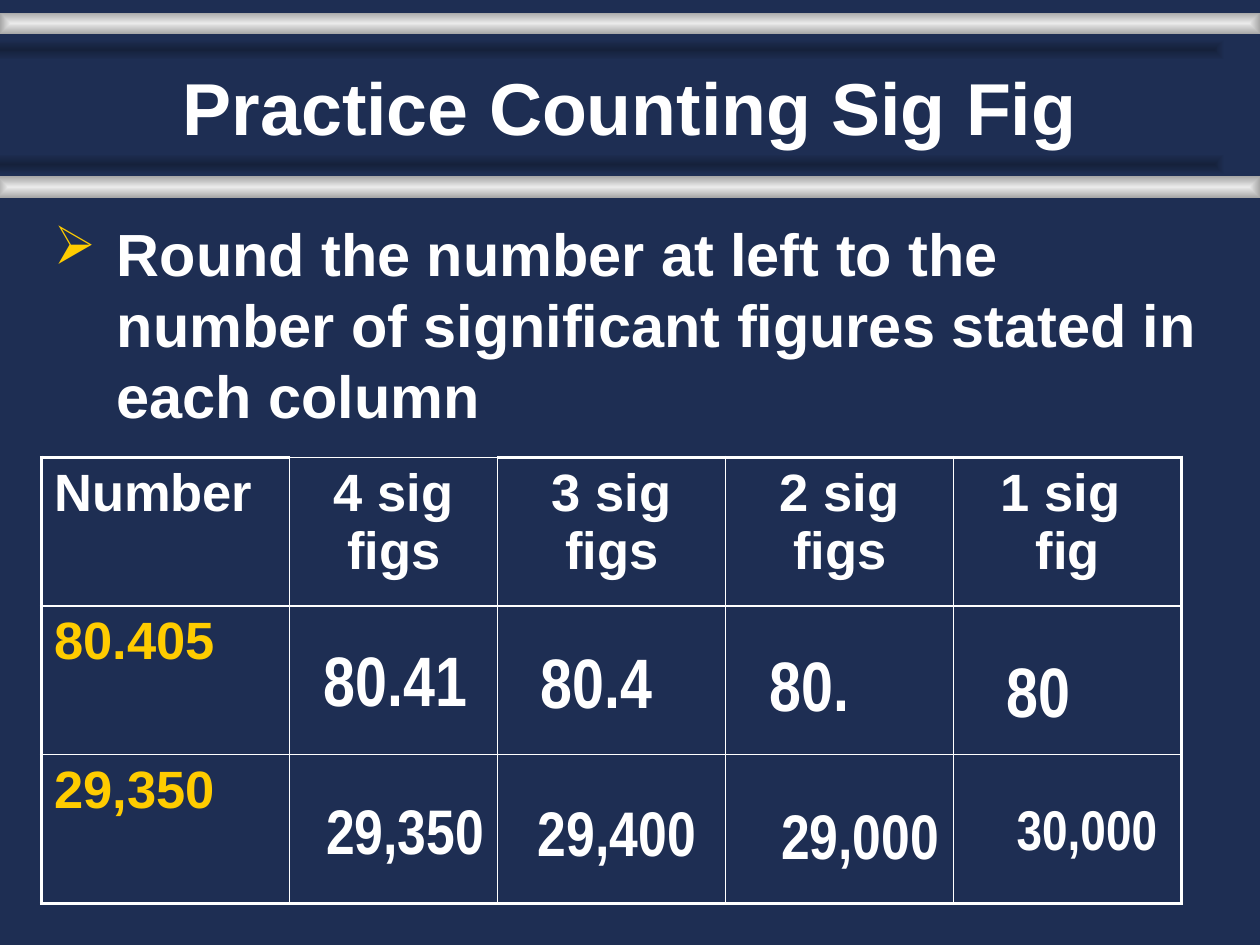
from lxml.etree import SubElement
from pptx import Presentation
from pptx.dml.color import RGBColor
from pptx.enum.shapes import MSO_SHAPE
from pptx.enum.text import MSO_ANCHOR, MSO_AUTO_SIZE, PP_ALIGN
from pptx.oxml import parse_xml
from pptx.oxml.ns import nsdecls, qn
from pptx.util import Inches, Pt

# Content
TITLE = "Practice Counting Sig Fig"
INSTRUCTION = ("Round the number at left to the number of significant figures "
               "stated in each column")
ROWS = [
    ["Number", "4 sig figs", "3 sig figs", "2 sig figs", "1 sig  fig"],
    ["80.405", "", "", "", ""],
    ["29,350", "", "", "", ""],
]
# Answers laid over the table: text, left, top, width, size
ANSWERS = [
    ("80.41", 2.47, 5.00, 1.43, 40), ("80.4", 4.19, 5.02, 1.52, 40),
    ("80.", 6.01, 5.04, 1.75, 40), ("80", 7.89, 5.09, 1.17, 40),
    ("29,350", 2.49, 6.23, 1.50, 36), ("29,400", 4.17, 6.25, 1.46, 36),
    ("29,000", 6.10, 6.27, 1.52, 36), ("30,000", 7.97, 6.26, 1.41, 32),
]

# Look
COLORS = {"navy": "1E2E53", "shade": "15213B", "light": "EAEAEA",
          "grey": "A7A7A7", "white": "FFFFFF", "gold": "FFCC00"}
METAL, SHADOW = ("light", "grey"), ("shade", "navy")
BARS = [(0, 0.1, 10, METAL), (-0.28, 0.31, 10, SHADOW),
        (-0.02, 1.4, 10.02, METAL), (-0.3, 1.22, 10.02, SHADOW)]
BAR_HEIGHT = 0.17
TABLE_LEFT, TABLE_TOP, ROW_HEIGHT = 0.33, 3.63, 1.18
COLUMNS = [1.97, 1.65] + [1.81] * 3
OUTER, INNER = 2.25, 1


def rgb(name):
    return RGBColor.from_string(COLORS[name])


def write(frame, text, size, color="white", font="Arial", before=0,
          align=PP_ALIGN.LEFT):
    """Fill a frame with one bold run; before is a share of the line."""
    paragraph = frame.paragraphs[0]
    paragraph.alignment = align
    if before:
        spacing = SubElement(paragraph._p.get_or_add_pPr(), qn("a:spcBef"))
        SubElement(spacing, qn("a:spcPct")).set("val", str(before * 1000))
    run = paragraph.add_run()
    run.text = text
    run.font.name, run.font.size, run.font.bold = font, Pt(size), True
    run.font.color.rgb = rgb(color)
    return paragraph


def add_frame(slide, left, top, width, height):
    box = slide.shapes.add_textbox(*map(Inches, (left, top, width, height)))
    box.text_frame.word_wrap = True
    return box.text_frame


def add_bar(slide, left, top, width, tones):
    bar = slide.shapes.add_shape(
        MSO_SHAPE.RECTANGLE, *map(Inches, (left, top, width, BAR_HEIGHT)))
    bar.shadow.inherit = False
    bar.line.fill.background()
    center, edge = (COLORS[tone] for tone in tones)
    gradient = parse_xml(
        f'<a:gradFill {nsdecls("a")} rotWithShape="1"><a:gsLst>'
        f'<a:gs pos="0"><a:srgbClr val="{center}"/></a:gs>'
        f'<a:gs pos="100000"><a:srgbClr val="{edge}"/></a:gs></a:gsLst>'
        '<a:path path="shape"><a:fillToRect l="50000" t="50000" r="50000" '
        'b="50000"/></a:path></a:gradFill>')
    bar._element.spPr.find(qn("a:prstGeom")).addnext(gradient)


def set_borders(cell, weights):
    properties = cell._tc.get_or_add_tcPr()
    for index, (side, weight) in enumerate(weights.items()):
        properties.insert(index, parse_xml(
            f'<a:ln{side} {nsdecls("a")} w="{int(Pt(weight))}"><a:solidFill>'
            f'<a:srgbClr val="{COLORS["white"]}"/></a:solidFill></a:ln{side}>'))


def add_grid(slide):
    last_row, last_col = len(ROWS) - 1, len(COLUMNS) - 1
    table = slide.shapes.add_table(
        len(ROWS), len(COLUMNS), Inches(TABLE_LEFT), Inches(TABLE_TOP),
        Inches(sum(COLUMNS)), Inches(ROW_HEIGHT * len(ROWS))).table
    table.first_row = table.horz_banding = False
    for column, width in zip(table.columns, COLUMNS):
        column.width = Inches(width)
    for r, texts in enumerate(ROWS):
        table.rows[r].height = Inches(ROW_HEIGHT)
        for c, text in enumerate(texts):
            cell = table.cell(r, c)
            cell.fill.background()
            # The outer frame is heavy, save above the second heading
            heavy = {"L": c == 0, "R": c == last_col,
                     "T": r == 0 and c != 1, "B": r == last_row}
            set_borders(cell, {side: OUTER if edge else INNER
                               for side, edge in heavy.items()})
            if text:
                write(cell.text_frame, text, 30, "gold" if r else "white",
                      before=20,
                      align=PP_ALIGN.CENTER if c else PP_ALIGN.LEFT)


def main():
    deck = Presentation()
    deck.slide_width, deck.slide_height = Inches(10), Inches(7.5)
    slide = deck.slides.add_slide(deck.slide_layouts[6])
    slide.background.fill.solid()
    slide.background.fill.fore_color.rgb = rgb("navy")

    # Title between metal bars
    for bar in BARS:
        add_bar(slide, *bar)
    title = add_frame(slide, 0.75, 0.32, 8.5, 0.92)
    title.vertical_anchor = MSO_ANCHOR.BOTTOM
    write(title, TITLE, 42, align=PP_ALIGN.CENTER)

    # Bulleted instruction
    body = add_frame(slide, 0.33, 1.67, 9.33, 5.5)
    properties = write(body, INSTRUCTION, 34, before=20)._p.pPr
    properties.set("marL", str(Inches(0.5)))
    properties.set("indent", str(-Inches(0.5)))
    color = SubElement(properties, qn("a:buClr"))
    SubElement(color, qn("a:srgbClr")).set("val", COLORS["gold"])
    SubElement(properties, qn("a:buSzPct")).set("val", "90000")
    SubElement(properties, qn("a:buChar")).set("char", "➢")

    # Table and answers
    add_grid(slide)
    for text, left, top, width, size in ANSWERS:
        answer = add_frame(slide, left, top, width, size / 60 + 0.1)
        answer.auto_size = MSO_AUTO_SIZE.SHAPE_TO_FIT_TEXT
        write(answer, text, size, font="Arial Narrow", before=50)

    deck.save("out.pptx")


if __name__ == "__main__":
    main()
